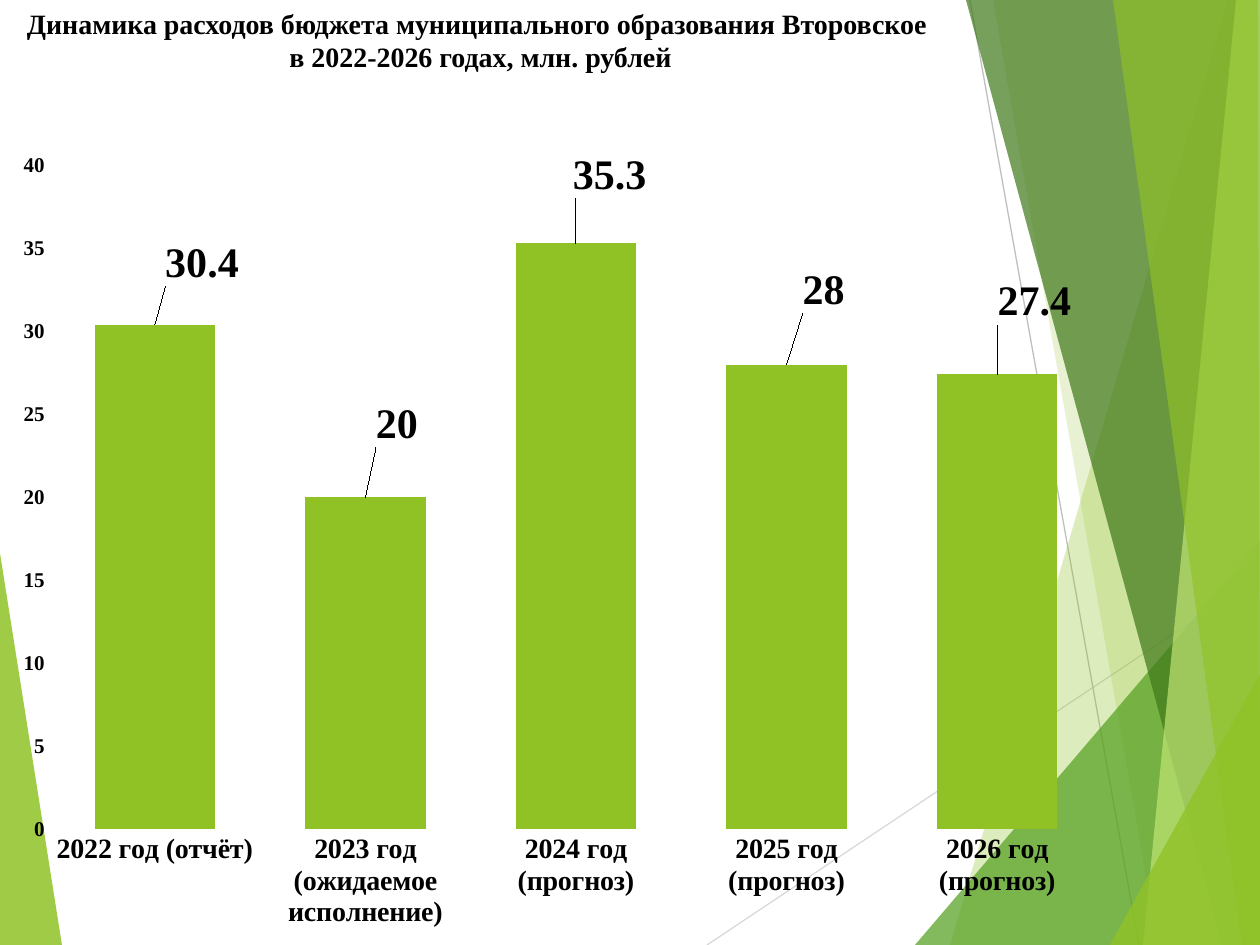
from lxml import etree
from pptx import Presentation
from pptx.chart.data import CategoryChartData
from pptx.dml.color import RGBColor
from pptx.enum.chart import XL_CHART_TYPE, XL_LABEL_POSITION, XL_TICK_MARK
from pptx.enum.shapes import MSO_CONNECTOR
from pptx.enum.text import MSO_ANCHOR, PP_ALIGN
from pptx.oxml.ns import qn
from pptx.util import Pt

EMU_PER_PX = 914400 / 126
SLIDE_WIDTH, SLIDE_HEIGHT = 1260, 945

COLUMN_CHART = XL_CHART_TYPE.COLUMN_CLUSTERED
OUTSIDE_END = XL_LABEL_POSITION.OUTSIDE_END
NO_TICK = XL_TICK_MARK.NONE
STRAIGHT = MSO_CONNECTOR.STRAIGHT
CENTER, TOP = PP_ALIGN.CENTER, MSO_ANCHOR.TOP

BLACK = RGBColor(0x00, 0x00, 0x00)
LIME = RGBColor(0x90, 0xC2, 0x26)
GREEN = RGBColor(0x54, 0xA0, 0x21)
DARK_GREEN = RGBColor(0x3F, 0x78, 0x19)
PALE_LIME = RGBColor(0xC0, 0xE4, 0x74)
LIGHT_GRAY = RGBColor(0xD9, 0xD9, 0xD9)
MID_GRAY = RGBColor(0xBF, 0xBF, 0xBF)

SERIF = "Times New Roman"
TITLE = ("Динамика расходов бюджета муниципального образования Второвское "
         "\vв 2022-2026 годах, млн. рублей")

# Category, value, label shift from its default place in px
EXPENSES = [
    ("2022 год (отчёт)", 30.4, (47, -33)),
    ("2023 год (ожидаемое исполнение)", 20, (32, -44)),
    ("2024 год (прогноз)", 35.3, (34, -40)),
    ("2025 год (прогноз)", 28, (37, -46)),
    ("2026 год (прогноз)", 27.4, (37, -44)),
]

# Corners relative to the region, colour, opacity in percent
LEFT_FACETS = [([(0, 0), (62, 392), (0, 392)], LIME, 85)]
RIGHT_FACETS = [
    ([(521, 0), (243, 945), (553, 945), (553, 0)], LIME, 30),
    ([(286, 0), (451, 945), (553, 945), (553, 0)], LIME, 20),
    ([(208, 945), (553, 541), (553, 945)], GREEN, 72),
    ([(259, 0), (515, 945), (553, 945), (553, 0)], DARK_GREEN, 70),
    ([(529, 0), (436, 945), (553, 945), (553, 0)], PALE_LIME, 70),
    ([(406, 0), (535, 945), (553, 945), (551, 0)], LIME, 65),
    ([(403, 945), (553, 674), (553, 945)], LIME, 80),
]
RIGHT_LINES = [
    ((0, 945), (553, 576), LIGHT_GRAY),
    ((263, 0), (432, 945), MID_GRAY),
]


def px(length):
    return round(length * EMU_PER_PX)


def set_font(font, size, name=SERIF, bold=True):
    font.color.rgb = BLACK
    values = {"size": Pt(size), "name": name, "bold": bold}
    for attribute, value in values.items():
        setattr(font, attribute, value)


def add_facets(slide, left, top, facets):
    for corners, color, opacity in facets:
        points = [(left + x, top + y) for x, y in corners]
        builder = slide.shapes.build_freeform(*points[0], scale=EMU_PER_PX)
        builder.add_line_segments(points[1:], close=True)
        shape = builder.convert_to_shape()
        shape.shadow.inherit = False
        shape.fill.solid()
        shape.fill.fore_color.rgb = color
        shape.line.fill.background()
        fill_color = shape.element.xpath("./p:spPr/a:solidFill/a:srgbClr")[0]
        alpha = etree.SubElement(fill_color, qn("a:alpha"))
        alpha.set("val", str(opacity * 1000))


def add_lines(slide, left, top, lines):
    for (x1, y1), (x2, y2), color in lines:
        line = slide.shapes.add_connector(
            STRAIGHT, px(left + x1), px(top + y1), px(left + x2), px(top + y2))
        line.line.color.rgb = color
        line.line.width = Pt(0.75)
        properties = line.element.xpath("./p:spPr")[0]
        etree.SubElement(properties, qn("a:effectLst"))


def add_title(slide, left, top, width, height):
    title = slide.shapes.add_textbox(px(left), px(top), px(width), px(height))
    frame = title.text_frame
    frame.word_wrap = True
    frame.vertical_anchor = TOP
    paragraph = frame.paragraphs[0]
    paragraph.text = TITLE
    paragraph.alignment = CENTER
    for run in paragraph.runs:
        set_font(run.font, 16)


def add_layout(parent, index, values):
    """Insert a manual chart layout as the child at the given index."""
    for old in parent.findall(qn("c:layout")):
        parent.remove(old)
    layout = etree.Element(qn("c:layout"))
    manual = etree.SubElement(layout, qn("c:manualLayout"))
    for name, value in values.items():
        etree.SubElement(manual, qn(f"c:{name}")).set("val", str(value))
    parent.insert(index, layout)


def add_expense_chart(slide, left, top, width, height):
    data = CategoryChartData()
    data.categories = [category for category, _, _ in EXPENSES]
    data.add_series("Series 1", [value for _, value, _ in EXPENSES])
    chart = slide.shapes.add_chart(
        COLUMN_CHART, px(left), px(top), px(width), px(height), data).chart
    chart.has_legend = False
    chart.has_title = False
    set_font(chart.font, 10, "Roboto", False)

    # Axes
    for axis, size in ((chart.category_axis, 16), (chart.value_axis, 12)):
        set_font(axis.tick_labels.font, size)
        axis.format.line.fill.background()
        values = {"major_tick_mark": NO_TICK, "minor_tick_mark": NO_TICK,
                  "has_major_gridlines": False}
        for attribute, value in values.items():
            setattr(axis, attribute, value)
    scale = {"minimum_scale": 0, "maximum_scale": 40, "major_unit": 5}
    for attribute, value in scale.items():
        setattr(chart.value_axis, attribute, value)

    # Columns and their shifted labels
    plot = chart.plots[0]
    plot.gap_width = 75
    plot.vary_by_categories = False
    series = plot.series[0]
    series.format.fill.solid()
    series.format.fill.fore_color.rgb = LIME
    for index in range(len(EXPENSES)):
        label = series.points[index].data_label
        set_font(label.font, 24)
        label.position = OUTSIDE_END
    labels = chart.element.xpath(".//c:ser/c:dLbls/c:dLbl")
    for label, (_, _, (shift_x, shift_y)) in zip(labels, EXPENSES):
        add_layout(label, 1, {"x": round(shift_x / width, 3),
                              "y": round(shift_y / height, 3)})

    # Inner plot area
    plot_area = chart.element.xpath(".//c:plotArea")[0]
    add_layout(plot_area, 0, {
        "layoutTarget": "inner", "xMode": "edge", "yMode": "edge",
        "x": round(49 / width, 3), "y": round(27 / height, 3),
        "w": round(1053 / width, 3), "h": round(663 / height, 3)})


def main():
    presentation = Presentation()
    presentation.slide_width = px(SLIDE_WIDTH)
    presentation.slide_height = px(SLIDE_HEIGHT)
    slide = presentation.slides.add_slide(presentation.slide_layouts[6])

    # Background decoration
    add_facets(slide, 0, 553, LEFT_FACETS)
    add_lines(slide, 707, 0, RIGHT_LINES)
    add_facets(slide, 707, 0, RIGHT_FACETS)

    # Content
    add_title(slide, 0, 0, 961, 165)
    add_expense_chart(slide, 0, 139, 1125, 806)
    presentation.save("out.pptx")


if __name__ == "__main__":
    main()
